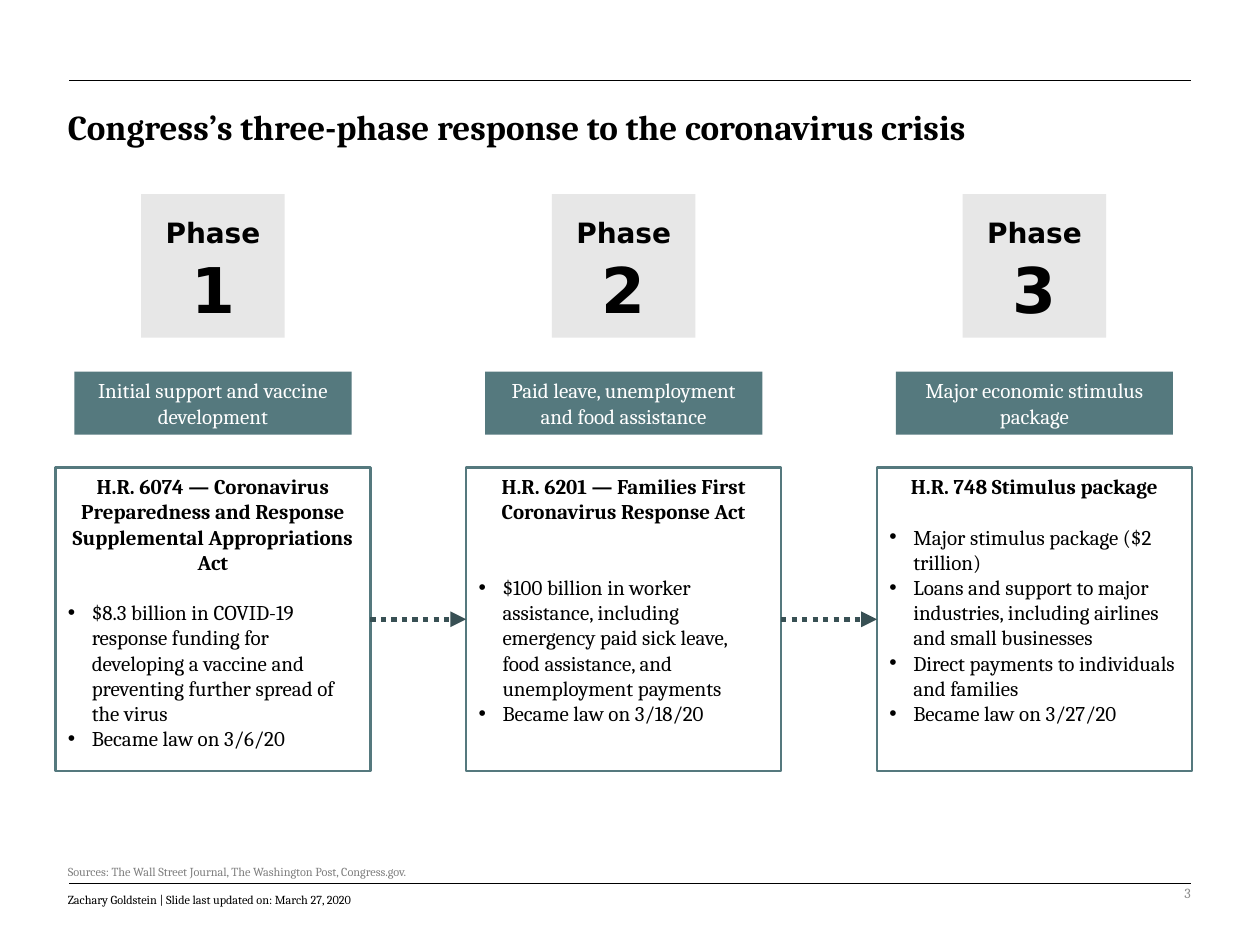
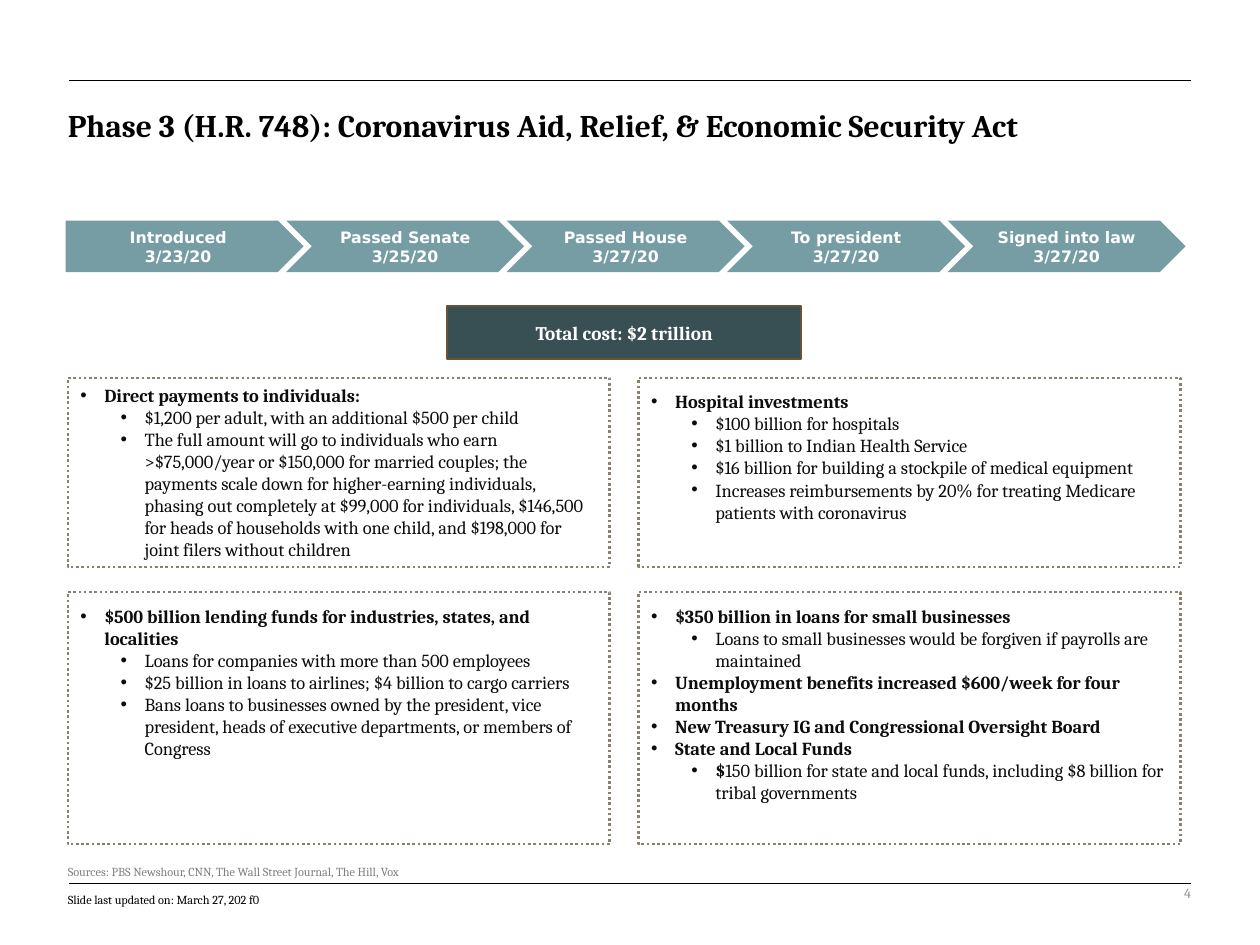
"""Build two slides on the congressional response to the coronavirus crisis."""
import pptx
import pptx.dml.color
import pptx.enum.dml
import pptx.enum.shapes
import pptx.enum.text
import pptx.oxml.ns
import pptx.util
from lxml import etree

Inches = pptx.util.Inches
Pt = pptx.util.Pt
RGBColor = pptx.dml.color.RGBColor
ALIGN = pptx.enum.text.PP_ALIGN
ANCHOR = pptx.enum.text.MSO_ANCHOR
SHAPE = pptx.enum.shapes.MSO_SHAPE
DOTTED = pptx.enum.dml.MSO_LINE.ROUND_DOT

BLACK = RGBColor(0x00, 0x00, 0x00)
WHITE = RGBColor(0xFF, 0xFF, 0xFF)
INK = RGBColor(0x0D, 0x0D, 0x0D)
SOURCE_GRAY = RGBColor(0x80, 0x80, 0x80)
NUMBER_GRAY = RGBColor(0x8C, 0x8C, 0x8C)
PALE_GRAY = RGBColor(0xE7, 0xE7, 0xE7)
TEAL = RGBColor(0x55, 0x79, 0x7E)
LIGHT_TEAL = RGBColor(0x76, 0x9D, 0xA3)
DARK_TEAL = RGBColor(0x38, 0x50, 0x54)
BROWN = RGBColor(0x67, 0x54, 0x37)
TAUPE = RGBColor(0x8A, 0x80, 0x6E)
SERIF, SANS = "Cambria", "DejaVu Sans"

PHASES_FRAME = {
    "title": "Congress’s three-phase response to the coronavirus crisis",
    "title_size": 20,
    "sources": "Sources: The Wall Street Journal, The Washington Post, Congress.gov.",
    "updated": "Zachary Goldstein | Slide last updated on: March 27, 2020",
    "number": "3",
}
ACT_FRAME = {
    "title": "Phase 3 (H.R. 748): Coronavirus Aid, Relief, & Economic Security Act",
    "title_size": 18,
    "sources": "Sources: PBS Newshour, CNN, The Wall Street Journal, The Hill, Vox",
    "updated": "Slide last updated on: March 27, 202 f0",
    "number": "4",
}

PHASES = [
    {
        "summary": "Initial support and vaccine development",
        "bill": "H.R. 6074 — Coronavirus Preparedness and Response Supplemental Appropriations Act",
        "gap": 14.4,
        "points": [
            "$8.3 billion in COVID-19 response funding for developing a vaccine "
            "and preventing further spread of the virus",
            "Became law on 3/6/20",
        ],
    },
    {
        "summary": "Paid leave, unemployment and food assistance",
        "bill": "H.R. 6201 — Families First Coronavirus Response Act",
        "gap": 28.8,
        "points": [
            "$100 billion in worker assistance, including emergency paid sick leave, "
            "food assistance, and unemployment payments",
            "Became law on 3/18/20",
        ],
    },
    {
        "summary": "Major economic stimulus package",
        "bill": "H.R. 748 Stimulus package",
        "gap": 14.4,
        "points": [
            "Major stimulus package ($2 trillion)",
            "Loans and support to major industries, including airlines and small businesses",
            "Direct payments to individuals and families",
            "Became law on 3/27/20",
        ],
    },
]

STEPS = [
    ("Introduced", "3/23/20"),
    ("Passed Senate", "3/25/20"),
    ("Passed House", "3/27/20"),
    ("To president", "3/27/20"),
    ("Signed into law", "3/27/20"),
]
TOTAL_COST = "Total cost: $2 trillion"

# Each provision is (level, bold words, plain words).
PROVISIONS = [
    [
        (0, "Direct payments to individuals:", ""),
        (1, "", "$1,200 per adult, with an additional $500 per child"),
        (1, "", "The full amount will go to individuals who earn >$75,000/year or "
                "$150,000 for married couples; the payments scale down for higher-earning "
                "individuals, phasing out completely at $99,000 for individuals, $146,500 "
                "for heads of households with one child, and $198,000 for joint filers "
                "without children"),
    ],
    [
        (0, "Hospital investments", ""),
        (1, "", "$100 billion for hospitals"),
        (1, "", "$1 billion to Indian Health Service"),
        (1, "", "$16 billion for building a stockpile of medical equipment"),
        (1, "", "Increases reimbursements by 20% for treating Medicare patients with coronavirus"),
    ],
    [
        (0, "$500 billion lending funds for industries, states, and localities", ""),
        (1, "", "Loans for companies with more than 500 employees"),
        (1, "", "$25 billion in loans to airlines; $4 billion to cargo carriers"),
        (1, "", "Bans loans to businesses owned by the president, vice president, "
                "heads of executive departments, or members of Congress"),
    ],
    [
        (0, "$350 billion in loans for small businesses", ""),
        (1, "", "Loans to small businesses would be forgiven if payrolls are maintained"),
        (0, "Unemployment benefits increased $600/week for four months", ""),
        (0, "New Treasury IG and Congressional Oversight Board", ""),
        (0, "State and Local Funds", ""),
        (1, "$", "150 billion for state and local funds, including $8 billion for tribal governments"),
    ],
]

PHASE_CENTER, PHASE_PITCH = 1.69, 3.26
STEP_LEFT, STEP_PITCH = 0.52, 1.75
PANEL_COLUMNS = (0.54, 5.07)
PANEL_ROWS = ((3, 1.5), (4.7, 2))
BULLET_INDENTS = (0.19, 0.51)


def style_run(run, size, color=BLACK, bold=False, font=SERIF):
    run.font.size = Pt(size)
    run.font.name = font
    run.font.bold = bold
    run.font.color.rgb = color


def write(shape, text, size, color=BLACK, bold=False, font=SERIF,
          align=ALIGN.LEFT, anchor=ANCHOR.TOP, spacing=None):
    frame = shape.text_frame
    frame.word_wrap = True
    frame.vertical_anchor = anchor
    frame.text = text
    for paragraph in frame.paragraphs:
        paragraph.alignment = align
        paragraph.line_spacing = spacing
        for run in paragraph.runs:
            style_run(run, size, color, bold, font)


def write_bullet(paragraph, level, parts, size, color):
    properties = paragraph._p.get_or_add_pPr()
    properties.set("marL", str(Inches(BULLET_INDENTS[level])))
    properties.set("indent", str(-Inches(BULLET_INDENTS[0])))
    for tag, attribute, value in (("a:buFont", "typeface", "Arial"), ("a:buChar", "char", "•")):
        etree.SubElement(properties, pptx.oxml.ns.qn(tag)).set(attribute, value)
    paragraph.level = level
    paragraph.alignment = ALIGN.LEFT
    for text, bold in parts:
        if text:
            run = paragraph.add_run()
            run.text = text
            style_run(run, size, color, bold)


def add_text(slide, bounds, text, size, **style):
    box = slide.shapes.add_textbox(*map(Inches, bounds))
    write(box, text, size, **style)


def add_box(slide, kind, bounds, fill=None, line=None, line_width=1.5):
    shape = slide.shapes.add_shape(kind, *map(Inches, bounds))
    shape.shadow.inherit = False
    if kind == SHAPE.ROUNDED_RECTANGLE:
        shape.adjustments[0] = 0
    if fill is None:
        shape.fill.background()
    else:
        shape.fill.solid()
        shape.fill.fore_color.rgb = fill
    if line is None:
        shape.line.fill.background()
    else:
        shape.line.color.rgb = line
        shape.line.width = Pt(line_width)
    return shape


def add_line(slide, start, end, color, width):
    connector = slide.shapes.add_connector(
        pptx.enum.shapes.MSO_CONNECTOR.STRAIGHT, *map(Inches, (*start, *end)))
    connector.line.color.rgb = color
    connector.line.width = Pt(width)
    etree.SubElement(connector._element.spPr, pptx.oxml.ns.qn("a:effectLst"))
    return connector


def add_arrow(slide, source, target):
    arrow = add_line(slide, (0, 0), (1, 0), DARK_TEAL, 3)
    arrow.begin_connect(source, 3)
    arrow.end_connect(target, 1)
    arrow.line.dash_style = DOTTED
    tail = etree.SubElement(arrow.line._get_or_add_ln(), pptx.oxml.ns.qn("a:tailEnd"))
    tail.set("type", "triangle")


def add_framed_slide(presentation, content):
    slide = presentation.slides.add_slide(presentation.slide_layouts[6])
    for y in (7.01, 0.64):
        add_line(slide, (0.55, y), (9.45, y), BLACK, 0.5)
    add_text(slide, (0.44, 0.83, 9.2, 0.7), content["title"], content["title_size"],
             bold=True, spacing=0.9)
    add_text(slide, (0.44, 6.8, 9.02, 0.21), content["sources"], 7,
             color=SOURCE_GRAY, spacing=1.1)
    add_text(slide, (0.44, 7.02, 3.33, 0.37), content["updated"], 7, spacing=1.1)
    add_text(slide, (7.06, 6.89, 2.49, 0.4), content["number"], 8, color=NUMBER_GRAY,
             align=ALIGN.RIGHT, anchor=ANCHOR.MIDDLE)
    return slide


def centered(center, top, width, height):
    return center - width / 2, top, width, height


def add_phase(slide, index, phase):
    center = PHASE_CENTER + index * PHASE_PITCH
    add_box(slide, SHAPE.RECTANGLE, centered(center, 1.54, 1.14, 1.14), PALE_GRAY)
    heading = {"bold": True, "font": SANS, "align": ALIGN.CENTER}
    add_text(slide, centered(center, 1.94, 0.72, 0.71), str(index + 1), 36, **heading)
    add_text(slide, centered(center, 1.66, 1.59, 0.37), "Phase", 16, **heading)
    banner = add_box(slide, SHAPE.ROUNDED_RECTANGLE, centered(center, 2.95, 2.2, 0.5), TEAL)
    write(banner, phase["summary"], 12, WHITE, align=ALIGN.CENTER, anchor=ANCHOR.MIDDLE)
    card = add_box(slide, SHAPE.RECTANGLE, centered(center, 3.71, 2.5, 2.41), WHITE, TEAL)
    write(card, phase["bill"], 12, bold=True, align=ALIGN.CENTER)
    for position, point in enumerate(phase["points"]):
        paragraph = card.text_frame.add_paragraph()
        if position == 0:
            paragraph.space_before = Pt(phase["gap"])
        write_bullet(paragraph, 0, [(point, False)], 12, BLACK)
    return card


def add_panel(slide, index, provisions):
    top, height = PANEL_ROWS[index // 2]
    panel = add_box(slide, SHAPE.ROUNDED_RECTANGLE,
                    (PANEL_COLUMNS[index % 2], top, 4.3, height), line=TAUPE)
    panel.line.dash_style = DOTTED
    frame = panel.text_frame
    frame.word_wrap = True
    frame.vertical_anchor = ANCHOR.MIDDLE if index == 0 else ANCHOR.TOP
    frame.margin_top = frame.margin_bottom = Inches(0.1)
    for position, (level, bold_words, plain_words) in enumerate(provisions):
        paragraph = frame.add_paragraph() if position else frame.paragraphs[0]
        write_bullet(paragraph, level, [(bold_words, True), (plain_words, False)], 10.5, INK)


def build_phases(presentation):
    slide = add_framed_slide(presentation, PHASES_FRAME)
    cards = [add_phase(slide, index, phase) for index, phase in enumerate(PHASES)]
    for source, target in zip(cards, cards[1:]):
        add_arrow(slide, source, target)


def build_act(presentation):
    slide = add_framed_slide(presentation, ACT_FRAME)
    for index, step in enumerate(STEPS):
        kind = SHAPE.CHEVRON if index else SHAPE.PENTAGON
        arrow = add_box(slide, kind, (STEP_LEFT + index * STEP_PITCH, 1.75, 1.89, 0.41), LIGHT_TEAL)
        write(arrow, "\n".join(step), 9, WHITE, True, SANS, ALIGN.CENTER, ANCHOR.MIDDLE)
    total = add_box(slide, SHAPE.RECTANGLE, (3.55, 2.43, 2.81, 0.42), DARK_TEAL, BROWN, 1)
    write(total, TOTAL_COST, 11, WHITE, True, align=ALIGN.CENTER, anchor=ANCHOR.MIDDLE)
    for index, provisions in enumerate(PROVISIONS):
        add_panel(slide, index, provisions)


def main():
    presentation = pptx.Presentation()
    presentation.slide_width = Inches(10)
    presentation.slide_height = Inches(7.5)
    build_phases(presentation)
    build_act(presentation)
    presentation.save("out.pptx")


if __name__ == "__main__":
    main()
